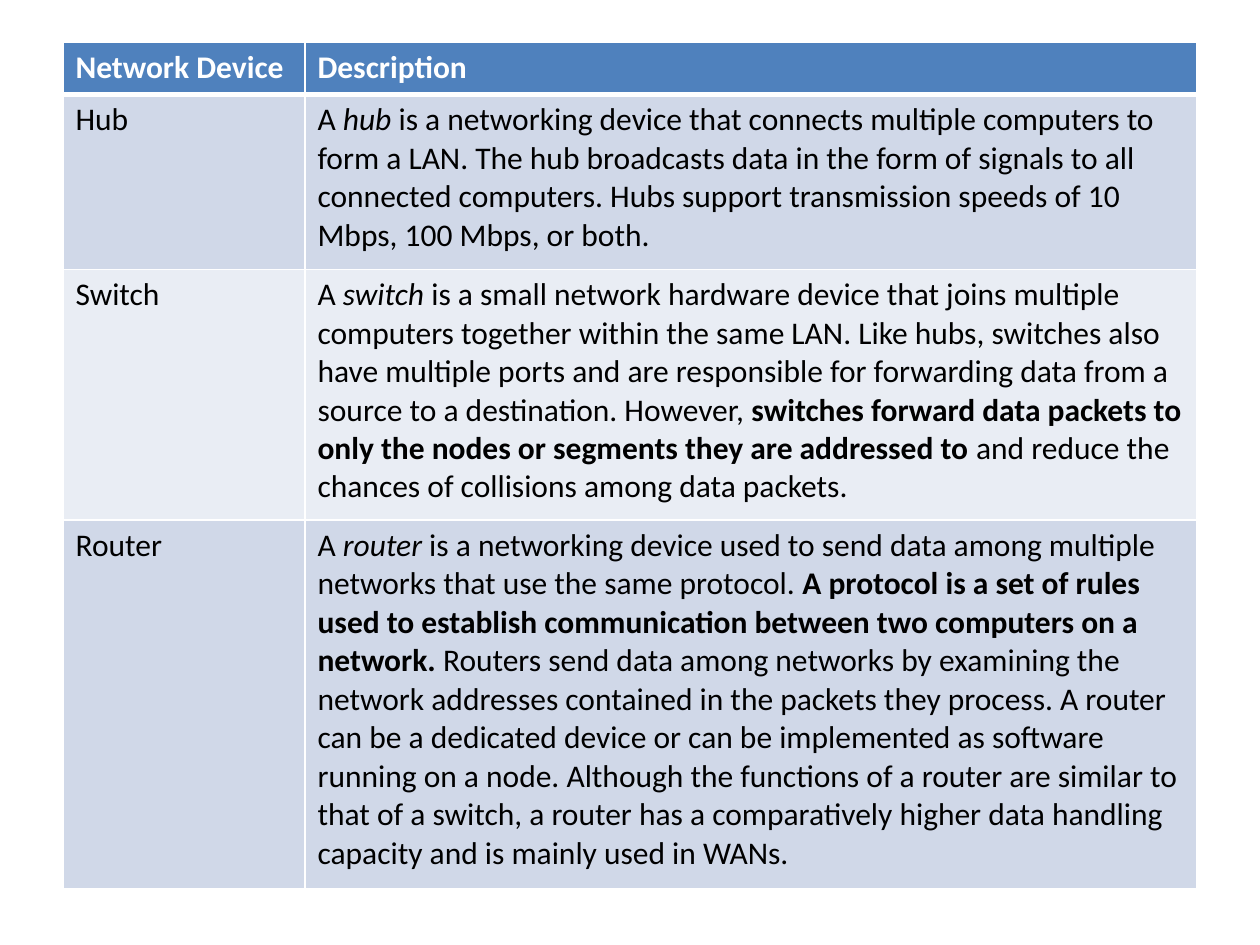
from lxml import etree
from pptx import Presentation
from pptx.dml.color import RGBColor
from pptx.oxml.ns import qn
from pptx.util import Pt

WHITE = RGBColor(0xFF, 0xFF, 0xFF)
BLACK = RGBColor(0x00, 0x00, 0x00)
BLUE = RGBColor(0x4F, 0x81, 0xBD)
BANDS = (RGBColor(0xD0, 0xD8, 0xE8), RGBColor(0xE9, 0xED, 0xF4))

FONT, SIZE = "Calibri", Pt(18)
LEFT, TOP = 36, 24
COLUMN_WIDTHS = (138.3, 509.7)
ROW_HEIGHTS = (30, 100, 143.3, 210.7)
THIN, THICK = Pt(1), Pt(3)

# Each cell is a list of (text, style) runs; style is "", "i" or "b"
ROWS = [
    ([("Network Device", "b")], [("Description", "b")]),
    ([("Hub", "")], [
        ("A ", ""),
        ("hub ", "i"),
        ("is a networking device that connects multiple computers to form a LAN. "
         "The hub broadcasts data in the form of signals to all connected computers. "
         "Hubs support transmission speeds of 10 Mbps, 100 Mbps, or both.", ""),
    ]),
    ([("Switch", "")], [
        ("A ", ""),
        ("switch ", "i"),
        ("is a small network hardware device that joins multiple computers together "
         "within the same LAN. Like hubs, switches also have multiple ports and are "
         "responsible for forwarding data from a source to a destination. However, ", ""),
        ("switches forward data packets to only the nodes or segments "
         "they are addressed to ", "b"),
        ("and reduce the chances of collisions among data packets.", ""),
    ]),
    ([("Router", "")], [
        ("A ", ""),
        ("router ", "i"),
        ("is a networking device used to send data among multiple networks "
         "that use the same protocol. ", ""),
        ("A protocol is a set of rules used to establish communication "
         "between two computers on a network.", "b"),
        (" Routers send data among networks by examining the network addresses "
         "contained in the packets they process. A router can be a dedicated device "
         "or can be implemented as software running on a node. Although the functions "
         "of a router are similar to that of a switch, a router has a comparatively "
         "higher data handling capacity and is mainly used in WANs.", ""),
    ]),
]


def set_borders(cell, top, bottom):
    """Draw white cell borders; call before the cell is filled."""
    tc_pr = cell._tc.get_or_add_tcPr()
    for side, width in (("L", THIN), ("R", THIN), ("T", top), ("B", bottom)):
        ln = etree.SubElement(tc_pr, qn(f"a:ln{side}"), w=str(width))
        fill = etree.SubElement(ln, qn("a:solidFill"))
        etree.SubElement(fill, qn("a:srgbClr"), val=str(WHITE))


def write_runs(cell, runs, color):
    p = cell.text_frame.paragraphs[0]
    for text, style in runs:
        r = p.add_run()
        r.text = text
        font = r.font
        font.name, font.size = FONT, SIZE
        font.color.rgb = color
        font.bold = style == "b"
        font.italic = style == "i"


def add_device_table(s):
    table = s.shapes.add_table(
        len(ROWS), len(COLUMN_WIDTHS), Pt(LEFT), Pt(TOP),
        Pt(sum(COLUMN_WIDTHS)), Pt(sum(ROW_HEIGHTS))).table
    for column, width in zip(table.columns, COLUMN_WIDTHS):
        column.width = Pt(width)

    for i, (row, height, texts) in enumerate(zip(table.rows, ROW_HEIGHTS, ROWS)):
        row.height = Pt(height)
        is_header = i == 0
        for cell, runs in zip(row.cells, texts):
            # A thick rule separates the header from the body
            set_borders(cell, THICK if i == 1 else THIN, THICK if is_header else THIN)
            cell.fill.solid()
            cell.fill.fore_color.rgb = BLUE if is_header else BANDS[(i - 1) % 2]
            write_runs(cell, runs, WHITE if is_header else BLACK)


def main():
    prs = Presentation()
    prs.slide_width, prs.slide_height = Pt(720), Pt(540)
    s = prs.slides.add_slide(prs.slide_layouts[6])
    add_device_table(s)
    prs.save("out.pptx")


if __name__ == "__main__":
    main()
